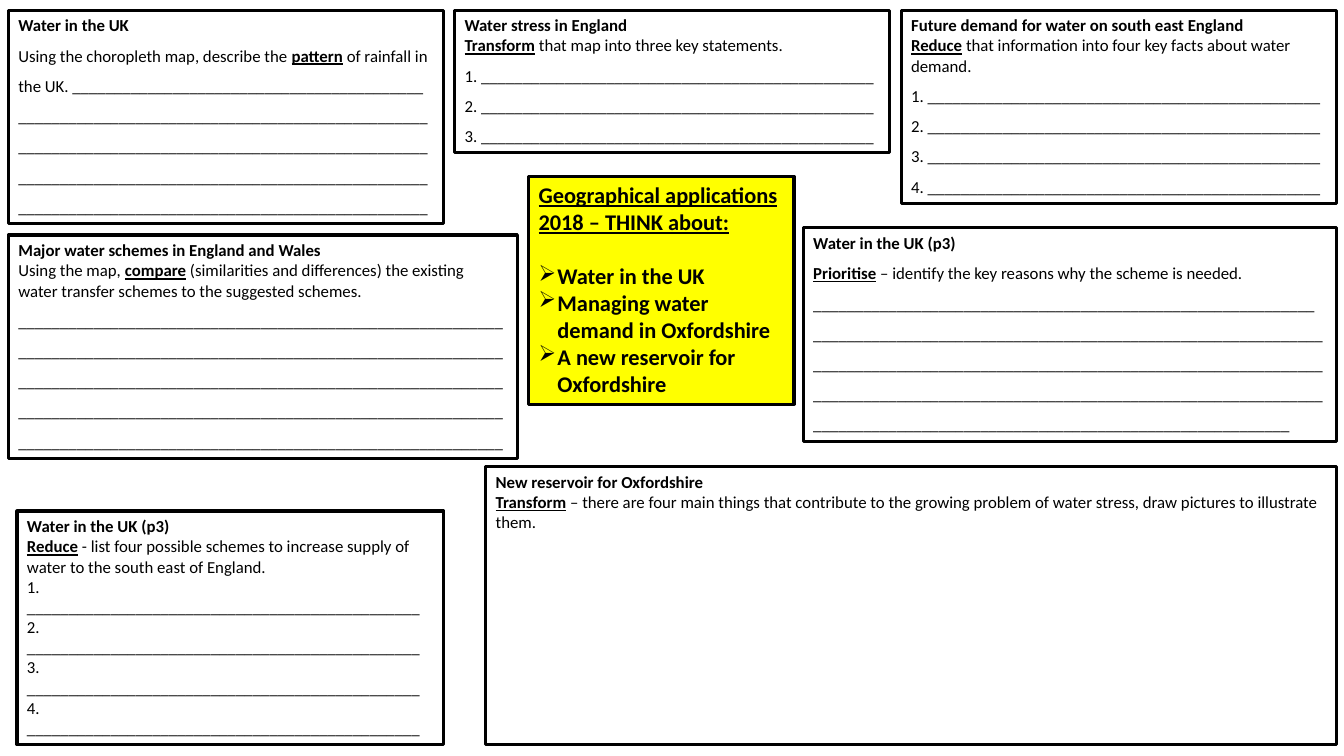
from lxml import etree
from pptx import Presentation
from pptx.dml.color import RGBColor
from pptx.enum.shapes import MSO_SHAPE
from pptx.enum.text import MSO_ANCHOR, PP_ALIGN
from pptx.oxml.ns import qn
from pptx.util import Pt

RECT = MSO_SHAPE.RECTANGLE
TOP = MSO_ANCHOR.TOP
LEFT = PP_ALIGN.LEFT
COLORS = {"ink": "000000", "highlight": "FFFF00"}
FONT = "Calibri"
INDENT = Pt(13.5)


def add_box(s, x, y, w, h, fill=None):
    """Add an outlined rectangle and return its text frame."""
    sp = s.shapes.add_shape(RECT, Pt(x), Pt(y), Pt(w), Pt(h))
    sp.shadow.inherit = False
    if fill:
        sp.fill.solid()
        sp.fill.fore_color.rgb = RGBColor.from_string(COLORS[fill])
    else:
        sp.fill.background()
    sp.line.color.rgb = RGBColor.from_string(COLORS["ink"])
    sp.line.width = Pt(2.25)
    tf = sp.text_frame
    tf.word_wrap = True
    tf.vertical_anchor = TOP
    return tf


def add_run(p, text, size=12, bold=False, underline=False):
    r = p.add_run()
    r.text = text
    r.font.name = FONT
    r.font.size = Pt(size)
    r.font.bold = bold
    r.font.underline = underline
    r.font.color.rgb = RGBColor.from_string(COLORS["ink"])


def add_paragraph(tf, spacing=1.0):
    p = tf.add_paragraph()
    p.alignment = LEFT
    p.line_spacing = spacing
    return p


def add_task(s, frame, title, before, command, after, spacing=1.0, answers=()):
    """Add a box with a title, an instruction and answer lines."""
    tf = add_box(s, *frame)
    p = tf.paragraphs[0]
    p.alignment = LEFT
    add_run(p, title, bold=True)

    p = add_paragraph(tf, spacing)
    if before:
        add_run(p, before)
    add_run(p, command, bold=True, underline=True)
    add_run(p, after)

    answer_spacing, lines = answers or (1.0, [])
    for line in lines:
        add_run(add_paragraph(tf, answer_spacing), line)


def numbered(count):
    return [f"{n}. " + "_" * 47 for n in range(1, count + 1)]


def add_bullet(p):
    pPr = p._p.get_or_add_pPr()
    pPr.set("marL", str(INDENT))
    pPr.set("indent", str(-INDENT))
    etree.SubElement(pPr, qn("a:buFont"), typeface="Wingdings")
    etree.SubElement(pPr, qn("a:buChar"), char="Ø")


def add_topics(s, frame, title, topics):
    """Add the highlighted box with a title and arrow bullets."""
    tf = add_box(s, *frame, fill="highlight")
    p = tf.paragraphs[0]
    p.alignment = LEFT
    add_run(p, title, size=16, bold=True, underline=True)
    for i, topic in enumerate(topics):
        p = add_paragraph(tf)
        if i == 0:
            p.space_before = Pt(19.5)
        add_bullet(p)
        add_run(p, topic, size=16, bold=True)


def main():
    prs = Presentation()
    prs.slide_width, prs.slide_height = Pt(960), Pt(540)
    s = prs.slides.add_slide(prs.slide_layouts[6])

    # Top row
    add_task(s, (6, 7.2, 311, 152.6), "Water in the UK",
             "Using the choropleth map, describe the ", "pattern",
             " of rainfall in the UK. " + "_" * 42 + " " + "_" * 49 * 4,
             spacing=1.5)
    add_task(s, (324.7, 7.2, 311, 101.5), "Water stress in England",
             "", "Transform", " that map into three key statements.",
             answers=(1.5, numbered(3)))
    add_task(s, (643.7, 7.2, 311, 138.2),
             "Future demand for water on south east England",
             "", "Reduce",
             " that information into four key facts about water demand.",
             answers=(1.5, numbered(4)))

    # Middle row
    add_task(s, (6, 167.8, 363.6, 159.8),
             "Major water schemes in England and Wales",
             "Using the map, ", "compare",
             " (similarities and differences) the existing water transfer "
             "schemes to the suggested schemes.",
             answers=(1.5, ["_" * 58 * 5]))
    add_task(s, (573.8, 162.7, 380.9, 152.6), "Water in the UK (p3)",
             "", "Prioritise",
             " – identify the key reasons why the scheme is needed. "
             + "_" * 60 + " " + "_" * 240,
             spacing=1.5)

    # Bottom row
    add_task(s, (12.2, 365, 304.8, 167), "Water in the UK (p3)",
             "", "Reduce",
             " - list four possible schemes to increase supply of water to "
             "the south east of England.",
             answers=(1.0, numbered(4)))
    add_task(s, (347, 333.4, 607.7, 198.6), "New reservoir for Oxfordshire",
             "", "Transform",
             " – there are four main things that contribute to the growing "
             "problem of water stress, draw pictures to illustrate them.")

    # Central topics
    add_topics(s, (377.6, 126, 189.6, 162.7),
               "Geographical applications 2018 – THINK about:",
               ["Water in the UK", "Managing water demand in Oxfordshire",
                "A new reservoir for Oxfordshire"])

    prs.save("out.pptx")


if __name__ == "__main__":
    main()
